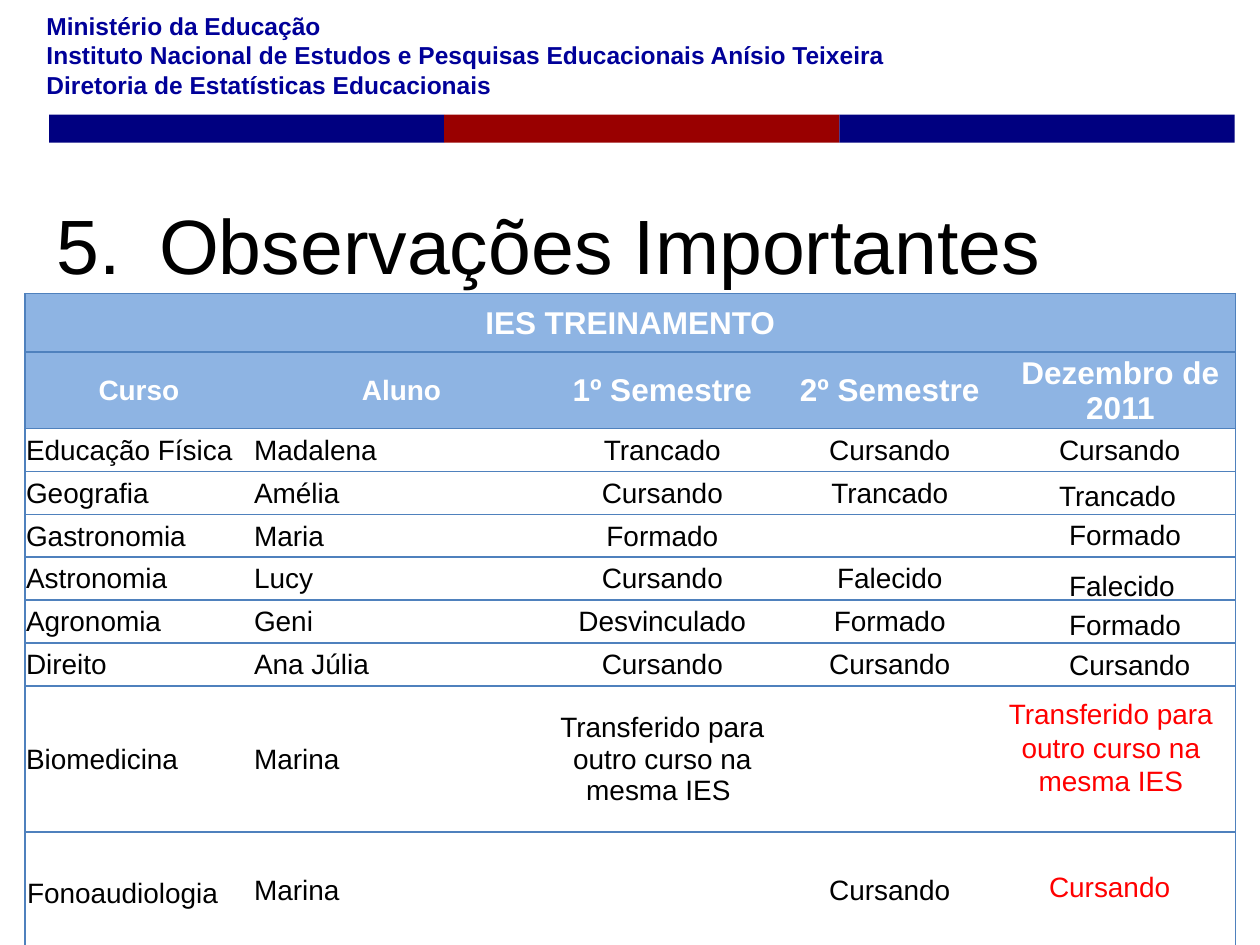
from lxml import etree
from pptx import Presentation
from pptx.dml.color import RGBColor
from pptx.enum.shapes import MSO_SHAPE
from pptx.enum.text import MSO_ANCHOR, MSO_AUTO_SIZE, PP_ALIGN
from pptx.oxml.ns import qn
from pptx.util import Pt

LEFT, CENTER = PP_ALIGN.LEFT, PP_ALIGN.CENTER
MIDDLE, TOP = MSO_ANCHOR.MIDDLE, MSO_ANCHOR.TOP
RECTANGLE = MSO_SHAPE.RECTANGLE
TITLE_ONLY = 5
FONT = "Arial"
COLORS = {
    "navy": "000080", "crimson": "990000", "ministry": "000099",
    "border": "4F81BD", "header": "8EB4E3", "white": "FFFFFF",
    "black": "000000", "red": "FF0000",
}

MINISTRY = [
    "Ministério da Educação",
    "Instituto Nacional de Estudos e Pesquisas Educacionais Anísio Teixeira",
    "Diretoria de Estatísticas Educacionais",
]
COLUMN_WIDTHS = [130.3, 169.9, 128.2, 131.8, 131.8]
ROW_HEIGHTS = [33.2, 33.2] + [24.5] * 6 + [83.5, 66.2]
HEADER_ROWS = [
    ["IES TREINAMENTO", "", "", "", ""],
    ["Curso", "Aluno", "1º Semestre", "2º Semestre", "Dezembro de 2011"],
]
STUDENT_ROWS = [
    ["Educação Física", "Madalena", "Trancado", "Cursando", ""],
    ["Geografia", "Amélia", "Cursando", "Trancado", ""],
    ["Gastronomia", "Maria", "Formado", "", ""],
    ["Astronomia", "Lucy", "Cursando", "Falecido", ""],
    ["Agronomia", "Geni", "Desvinculado", "Formado", ""],
    ["Direito", "Ana Júlia", "Cursando", "Cursando", ""],
    ["Biomedicina", "Marina", "Transferido para outro curso na mesma IES ", "", ""],
    ["", "Marina", "", "Cursando", ""],
]
# text, left, top, width, height, colour, alignment; offsets from the table corner
TABLE_LABELS = [
    ("Transferido para outro curso na mesma IES", 538.6, 226.8, 164, 65.5, "red", CENTER),
    ("Cursando", 578.2, 325.4, 119, 26.6, "red", LEFT),
    ("Cursando", 589.7, 198.7, 119, 26.6, "black", LEFT),
    ("Cursando", 583.9, 75.6, 119, 26.6, "black", LEFT),
    ("Formado", 589.7, 175.7, 96.5, 26.6, "black", LEFT),
    ("Formado", 589.7, 124.6, 96.5, 26.6, "black", LEFT),
    ("Falecido", 589.7, 153.4, 108, 26.6, "black", LEFT),
    ("Trancado", 583.9, 102.2, 108, 26.6, "black", LEFT),
    ("Fonoaudiologia", -5.8, 329, 124.6, 26.6, "black", LEFT),
]


def rgb(name):
    return RGBColor.from_string(COLORS[name])


def format_text(frame, size, color, bold=False, align=LEFT):
    for paragraph in frame.paragraphs:
        paragraph.alignment = align
        for run in paragraph.runs:
            run.font.name = FONT
            run.font.size = Pt(size)
            run.font.bold = bold
            run.font.color.rgb = rgb(color)


def add_label(slide, text, left, top, width, height, color, align=LEFT,
              size=16, bold=False, anchor=TOP):
    label = slide.shapes.add_textbox(Pt(left), Pt(top), Pt(width), Pt(height))
    frame = label.text_frame
    frame.word_wrap = True
    frame.vertical_anchor = anchor
    frame.text = text
    format_text(frame, size, color, bold, align)


def add_ministry_header(slide, left, top, width):
    add_label(slide, "\n".join(MINISTRY), left, top, width, 58.3, "ministry",
              size=14, bold=True, anchor=MIDDLE)


def add_color_band(slide, left, top, width, height):
    colors = ["navy", "crimson", "navy"]
    part = width / len(colors)
    for i, color in enumerate(colors):
        bar = slide.shapes.add_shape(
            RECTANGLE, Pt(left + i * part), Pt(top), Pt(part), Pt(height))
        bar.shadow.inherit = False
        bar.fill.solid()
        bar.fill.fore_color.rgb = rgb(color)
        bar.line.fill.background()


def set_borders(cell, drawn_sides):
    """Draw the given sides (L, R, T, B) and hide the others."""
    properties = cell._tc.get_or_add_tcPr()
    for side in "LRTB":
        line = etree.SubElement(properties, qn(f"a:ln{side}"), w=str(Pt(1)))
        if side in drawn_sides:
            fill = etree.SubElement(line, qn("a:solidFill"))
            etree.SubElement(fill, qn("a:srgbClr"), val=COLORS["border"])
        else:
            etree.SubElement(line, qn("a:noFill"))


def fill_cell(cell, text, row, column):
    is_header = row < len(HEADER_ROWS)
    last_column = len(COLUMN_WIDTHS) - 1
    set_borders(cell, "TB" + "L" * (column == 0) + "R" * (column == last_column))
    cell.fill.solid()
    cell.fill.fore_color.rgb = rgb("header" if is_header else "white")
    cell.margin_left = cell.margin_right = cell.margin_top = Pt(0.7)
    cell.margin_bottom = 0
    cell.vertical_anchor = MIDDLE
    cell.text_frame.text = text
    large = row == 0 or (is_header and column >= 2)
    format_text(cell.text_frame, 18 if large else 16,
                "white" if is_header else "black", is_header,
                CENTER if is_header or column >= 2 else LEFT)


def add_status_table(slide, left, top):
    rows = HEADER_ROWS + STUDENT_ROWS
    table = slide.shapes.add_table(
        len(rows), len(COLUMN_WIDTHS), Pt(left), Pt(top),
        Pt(sum(COLUMN_WIDTHS)), Pt(sum(ROW_HEIGHTS))).table
    table.first_row = table.horz_banding = False
    for column, width in zip(table.columns, COLUMN_WIDTHS):
        column.width = Pt(width)
    for table_row, height in zip(table.rows, ROW_HEIGHTS):
        table_row.height = Pt(height)
    for r, texts in enumerate(rows):
        for c, text in enumerate(texts):
            fill_cell(table.cell(r, c), text, r, c)
    table.cell(0, 0).merge(table.cell(0, len(COLUMN_WIDTHS) - 1))
    set_borders_of_title = table.cell(0, 0)._tc.tcPr.find(qn("a:lnR"))
    set_borders_of_title.getparent().replace(
        set_borders_of_title, copy_as_right(table.cell(0, 0)))
    for text, dx, dy, width, height, color, align in TABLE_LABELS:
        add_label(slide, text, left + dx, top + dy, width, height, color, align)


def copy_as_right(cell):
    """Return a right border that matches the left border of the cell."""
    right = etree.fromstring(etree.tostring(cell._tc.tcPr.find(qn("a:lnL"))))
    right.tag = qn("a:lnR")
    return right


def place_title(slide, left, top, width, height):
    title = slide.shapes.title
    title.left, title.top = Pt(left), Pt(top)
    title.width, title.height = Pt(width), Pt(height)
    frame = title.text_frame
    frame.text = "Observações Importantes"
    frame.auto_size = MSO_AUTO_SIZE.NONE
    frame.vertical_anchor = MIDDLE
    format_text(frame, 44, "black")
    properties = frame.paragraphs[0]._p.get_or_add_pPr()
    properties.set("marL", str(Pt(58.5)))
    properties.set("indent", str(Pt(-58.5)))
    etree.SubElement(properties, qn("a:buFont"), typeface=FONT)
    etree.SubElement(properties, qn("a:buAutoNum"), type="arabicPeriod", startAt="5")
    # The title lies in front of the table it overlaps.
    slide.shapes._spTree.append(title._element)


def main():
    presentation = Presentation()
    presentation.slide_width, presentation.slide_height = Pt(720), Pt(540)
    slide = presentation.slides.add_slide(presentation.slide_layouts[TITLE_ONLY])
    add_color_band(slide, 28, 65.5, 677.5, 16)
    add_ministry_header(slide, 19.5, 2.2, 695)
    add_status_table(slide, 14.2, 167.8)
    place_title(slide, 25.2, 94.3, 648, 90)
    presentation.save("out.pptx")


if __name__ == "__main__":
    main()
